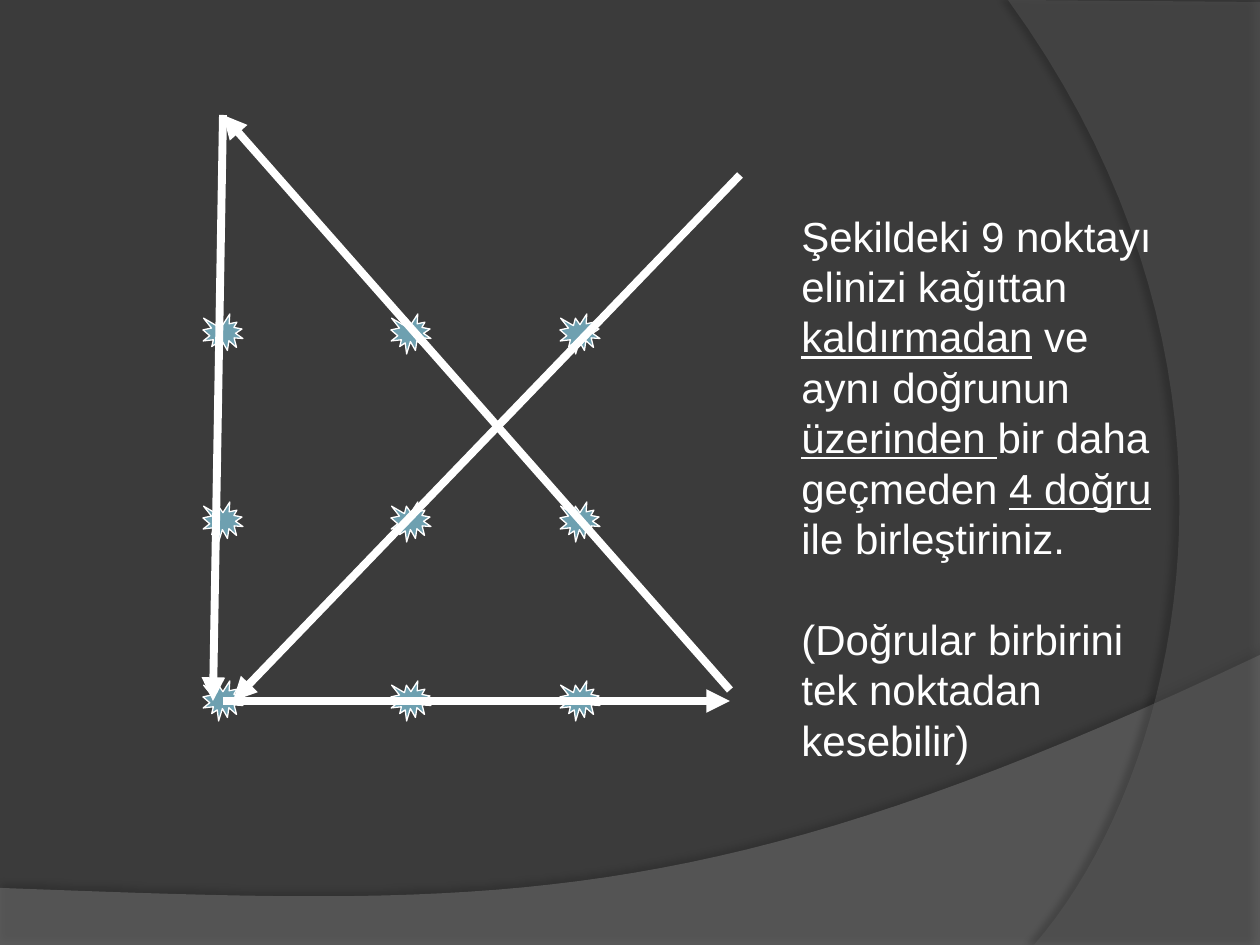
from itertools import product
from lxml import etree
from pptx import Presentation
from pptx.dml.color import RGBColor
from pptx.enum.shapes import MSO_CONNECTOR, MSO_SHAPE
from pptx.oxml import parse_xml
from pptx.oxml.ns import nsdecls, qn
from pptx.util import Emu, Pt

PX = 914400 / 126
COLORS = {"background": "3B3B3B", "wave": "7F7F7F", "arc": "5E5E5E",
          "dot": "6EA0B0", "white": "FFFFFF"}


def px(n):
    return Emu(round(n * PX))


def rgb(name):
    return RGBColor.from_string(COLORS[name])


prs = Presentation()
prs.slide_width, prs.slide_height = px(1260), px(945)
s = prs.slides.add_slide(prs.slide_layouts[6])
s.background.fill.solid()
s.background.fill.fore_color.rgb = rgb("background")

# Translucent backdrop: corners, then a Bezier curve from the last corner
# Columns: colour, opacity %, corners, curve, shadow (opacity %, distance pt, angle)
backdrops = [
    ("wave", 45, [(0, 888), (0, 945), (1260, 945), (1260, 655)],
     [(704, 919), (493, 906), (0, 888)], (35, 3.5, 270)),
    ("arc", 40, [(1260, 2), (1260, 945), (1034, 945)],
     [(1178, 780), (1283, 378), (1008, 0)], (45, 4, 180)),
]
STEPS = 40
for color, opacity, corners, controls, (dark, dist, angle) in backdrops:
    curve = [corners[-1]] + controls
    points = corners[1:]
    for i in range(1, STEPS + 1):
        t = i / STEPS
        weights = ((1 - t) ** 3, 3 * t * (1 - t) ** 2, 3 * t * t * (1 - t), t ** 3)
        points.append(tuple(sum(w * p[axis] for w, p in zip(weights, curve))
                            for axis in (0, 1)))
    points = [(px(x), px(y)) for x, y in points]
    fb = s.shapes.build_freeform(px(corners[0][0]), px(corners[0][1]))
    fb.add_line_segments(points, close=True)
    sp = fb.convert_to_shape()
    sp.fill.solid()
    sp.fill.fore_color.rgb = rgb(color)
    sp.line.fill.background()
    clr = sp.fill._xPr.find(qn("a:solidFill"))[0]
    etree.SubElement(clr, qn("a:alpha"), val=str(opacity * 1000))
    sp._element.spPr.append(parse_xml(
        f'<a:effectLst {nsdecls("a")}><a:outerShdw blurRad="{Pt(4)}" dist="{Pt(dist)}" '
        f'dir="{angle * 60000}" algn="ctr" rotWithShape="0"><a:srgbClr val="000000">'
        f'<a:alpha val="{dark * 1000}"/></a:srgbClr></a:outerShdw></a:effectLst>'))

# Nine dots
for y, x in product((314, 502, 681), (203, 391, 560)):
    sp = s.shapes.add_shape(MSO_SHAPE.EXPLOSION1, px(x), px(y), px(40), px(40))
    sp.shadow.inherit = False
    sp.fill.solid()
    sp.fill.fore_color.rgb = rgb("dot")
    sp.line.color.rgb = rgb("white")
    sp.line.width = Pt(0.75)

# Four joining arrows
arrows = [(740, 175, 233, 701), (223, 115, 213, 701),
          (730, 690, 223, 115), (223, 701, 730, 701)]
for ends in arrows:
    line = s.shapes.add_connector(MSO_CONNECTOR.STRAIGHT, *map(px, ends))
    line.line.color.rgb = rgb("white")
    line.line.width = Pt(4.5)
    etree.SubElement(line.line._get_or_add_ln(), qn("a:tailEnd"), type="triangle")
    etree.SubElement(line._element.spPr, qn("a:effectLst"))

# Puzzle text: (wording, underlined) runs per paragraph
paragraphs = [
    [("Şekildeki 9 noktayı elinizi kağıttan ", False), ("kaldırmadan", True),
     (" ve", False)],
    [("aynı doğrunun ", False), ("üzerinden ", True), ("bir daha geçmeden ", False),
     ("4 doğru", True), (" ile birleştiriniz.", False)],
    [("(Doğrular birbirini tek noktadan kesebilir)", False)],
]
tf = s.shapes.add_textbox(px(789), px(204), px(407), px(566)).text_frame
tf.word_wrap = True
for i, runs in enumerate(paragraphs):
    p = tf.paragraphs[0] if i == 0 else tf.add_paragraph()
    p.line_spacing = Pt(28.8)
    for text, underlined in runs:
        r = p.add_run()
        r.text = text
        r.font.name = "Arial"
        r.font.size = Pt(24)
        r.font.underline = underlined
        r.font.color.rgb = rgb("white")
p.space_before = Pt(28.8)

prs.save("out.pptx")
